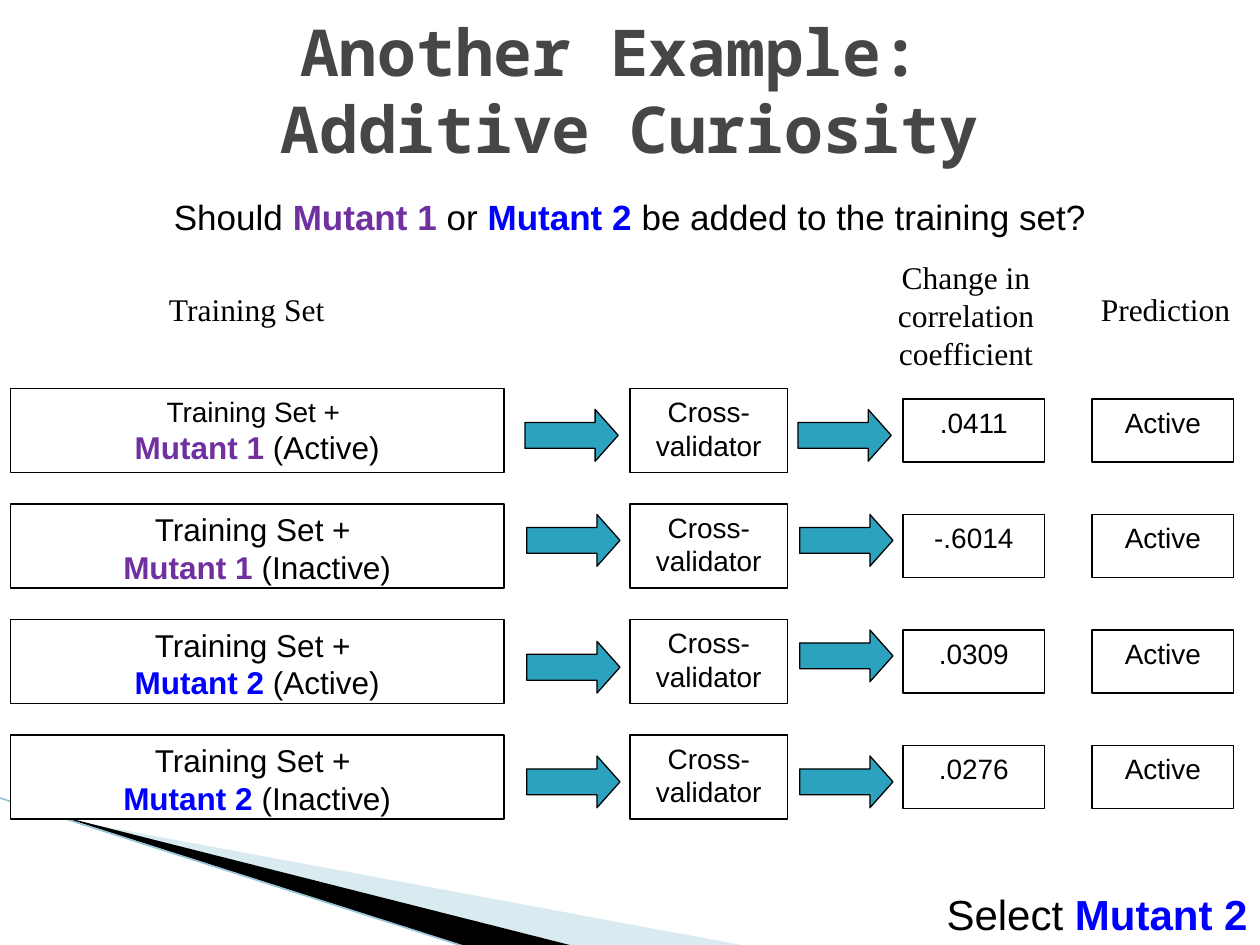
from dataclasses import dataclass

from lxml.etree import SubElement
from pptx import Presentation
from pptx.dml.color import RGBColor
from pptx.enum.shapes import MSO_CONNECTOR, MSO_SHAPE
from pptx.enum.text import MSO_ANCHOR, PP_ALIGN
from pptx.oxml.ns import qn
from pptx.util import Pt


@dataclass(frozen=True)
class Theme:
    ink: str = "000000"
    paper: str = "FFFFFF"
    heading: str = "464646"
    mutant_1: str = "7030A0"
    mutant_2: str = "0000FF"
    arrow: str = "2DA2BF"
    sweep: str = "A0CBDC"
    sweep_line: str = "97C5D8"
    body_font: str = "Arial"
    title_font: str = "Noto Sans Mono"
    label_font: str = "Times New Roman"
    title_size: float = 36.9
    verdict_size: float = 24
    question_size: float = 20
    text_size: float = 18
    small_size: float = 16
    outline: float = 0.75


THEME = Theme()
MUTANTS = {1: ("Mutant 1", THEME.mutant_1), 2: ("Mutant 2", THEME.mutant_2)}
ARROW_SIZE = (53.3, 29.6)

# Mutant, label, first line size, change in correlation, and (x, y) shifts of the two arrows
ROWS = [
    (1, "(Active)", THEME.small_size, ".0411", (0, 12), (0, 12)),
    (1, "(Inactive)", THEME.text_size, "-.6014", (1, 6), (1, 6)),
    (2, "(Active)", THEME.text_size, ".0309", (1, 12.5), (1, 6)),
    (2, "(Inactive)", THEME.text_size, ".0276", (1, 12), (1, 12)),
]


def rgb(code):
    return RGBColor.from_string(code)


def points(box):
    return [Pt(length) for length in box]


def write(shape, lines, size, font=THEME.body_font, color=THEME.ink,
          align=PP_ALIGN.CENTER, anchor=MSO_ANCHOR.TOP, bold=False):
    """Write lines of (text, colour, size) spans, where a colour also makes a span bold."""
    frame = shape.text_frame
    frame.word_wrap = True
    frame.vertical_anchor = anchor
    para = frame.paragraphs[0]
    para.alignment = align
    para.font.name = font
    para.font.size = Pt(size)
    para.font.bold = bold
    para.font.color.rgb = rgb(color)
    for number, spans in enumerate(lines):
        if number:
            para.add_line_break()
        for text, accent, own_size in spans:
            span = para.add_run()
            span.text = text
            if accent:
                span.font.color.rgb = rgb(accent)
                span.font.bold = True
            if own_size:
                span.font.size = Pt(own_size)


def plain(text, size=None):
    return (text, None, size)


def mutant(number, ending=""):
    name, color = MUTANTS[number]
    return (name + ending, color, None)


def add_text(page, box, lines, size, **style):
    write(page.shapes.add_textbox(*points(box)), lines, size, **style)


def add_outlined(page, kind, box, fill):
    shape = page.shapes.add_shape(kind, *points(box))
    shape.shadow.inherit = False
    shape.fill.solid()
    shape.fill.fore_color.rgb = rgb(fill)
    shape.line.color.rgb = rgb(THEME.ink)
    shape.line.width = Pt(THEME.outline)
    return shape


def add_card(page, box, lines, size):
    write(add_outlined(page, MSO_SHAPE.RECTANGLE, box, THEME.paper), lines, size)


def add_arrow(page, left, top):
    arrow = add_outlined(page, MSO_SHAPE.RIGHT_ARROW, (left, top, *ARROW_SIZE), THEME.arrow)
    arrow.adjustments[0] = 0.5
    arrow.adjustments[1] = 0.445


def add_wedge(page, corners, color, opacity=None):
    start, *others = [points(corner) for corner in corners]
    builder = page.shapes.build_freeform(*start)
    builder.add_line_segments(others, close=True)
    wedge = builder.convert_to_shape()
    wedge.shadow.inherit = False
    wedge.line.fill.background()
    wedge.fill.solid()
    wedge.fill.fore_color.rgb = rgb(color)
    if opacity:
        tint = wedge.fill._xPr.find(".//" + qn("a:srgbClr"))
        SubElement(tint, qn("a:alpha")).set("val", str(opacity * 1000))


def draw_sweep(page, box):
    """Corner decoration: two wedges and a thin line."""
    left, top, width, height = box
    right, bottom = left + width, top + height
    add_wedge(page, [(left + 40.3, top + 12.9), (right, bottom - 0.5),
                     (left + 329, bottom - 0.5), (left + 40.3, top + 12.2)],
              THEME.sweep, opacity=40)
    add_wedge(page, [(left + 38.9, top + 11.5), (left + 329.7, bottom - 0.5),
                     (left + 268.5, bottom), (left + 39.6, top + 12.2)], THEME.ink)
    line = page.shapes.add_connector(
        MSO_CONNECTOR.STRAIGHT, *points((left, top, left + 267.8, bottom)))
    line.line.color.rgb = rgb(THEME.sweep_line)
    line.line.width = Pt(0.95)
    SubElement(line._element.spPr, qn("a:effectLst"))


def draw_heading(page, box):
    """Title with the question under it."""
    left, top, width, _ = box
    add_text(page, (left, top, width, 90),
             [[plain("Another Example: ")], [plain("Additive Curiosity")]],
             THEME.title_size, font=THEME.title_font, color=THEME.heading,
             anchor=MSO_ANCHOR.MIDDLE, bold=True)
    question = [plain("Should "), mutant(1, " "), plain("or "), mutant(2, " "),
                plain("be added to the training set?")]
    add_text(page, (left, top + 102, width, 31.5), [question], THEME.question_size)


def draw_column_labels(page, box):
    left, top, _, height = box
    for text, offset, drop, width in (
        ("Training Set", 78, 18, 114),
        ("Change in correlation coefficient", 480, 0, 132),
        ("Prediction", 612, 18, 96),
    ):
        add_text(page, (left + offset, top + drop, width, height - 2.4 * drop),
                 [[plain(text)]], THEME.text_size, font=THEME.label_font)


def draw_row(page, box, row):
    """One experiment: training set, cross-validator, change and prediction."""
    left, top, _, height = box
    number, label, first_size, change, *shifts = row
    training = [[plain("Training Set + ", first_size)], [mutant(number, " "), plain(label)]]
    add_card(page, (left, top, 282, height), training, THEME.text_size)
    add_card(page, (left + 354, top, 90, height), [[plain("Cross-validator")]], THEME.small_size)
    for offset, text in ((510, change), (618, "Active")):
        add_card(page, (left + offset, top + 6, 81, height - 12), [[plain(text)]],
                 THEME.small_size)
    for offset, (shift, drop) in zip((294, 450), shifts):
        add_arrow(page, left + offset + shift, top + drop)


def draw_verdict(page, box):
    add_text(page, box, [[plain("Select "), mutant(2)]], THEME.verdict_size,
             align=PP_ALIGN.RIGHT)


def main():
    deck = Presentation()
    deck.slide_width, deck.slide_height = Pt(720), Pt(540)
    page = deck.slides.add_slide(deck.slide_layouts[6])
    draw_sweep(page, (-0.7, 455.8, 429.1, 85.6))
    draw_heading(page, (0, 6, 720, 133.5))
    draw_column_labels(page, (6, 144, 708, 72.7))
    for index, row in enumerate(ROWS):
        draw_row(page, (6, 222 + 66 * index, 699, 48), row)
    draw_verdict(page, (288, 504, 432, 36))
    deck.save("out.pptx")


if __name__ == "__main__":
    main()
